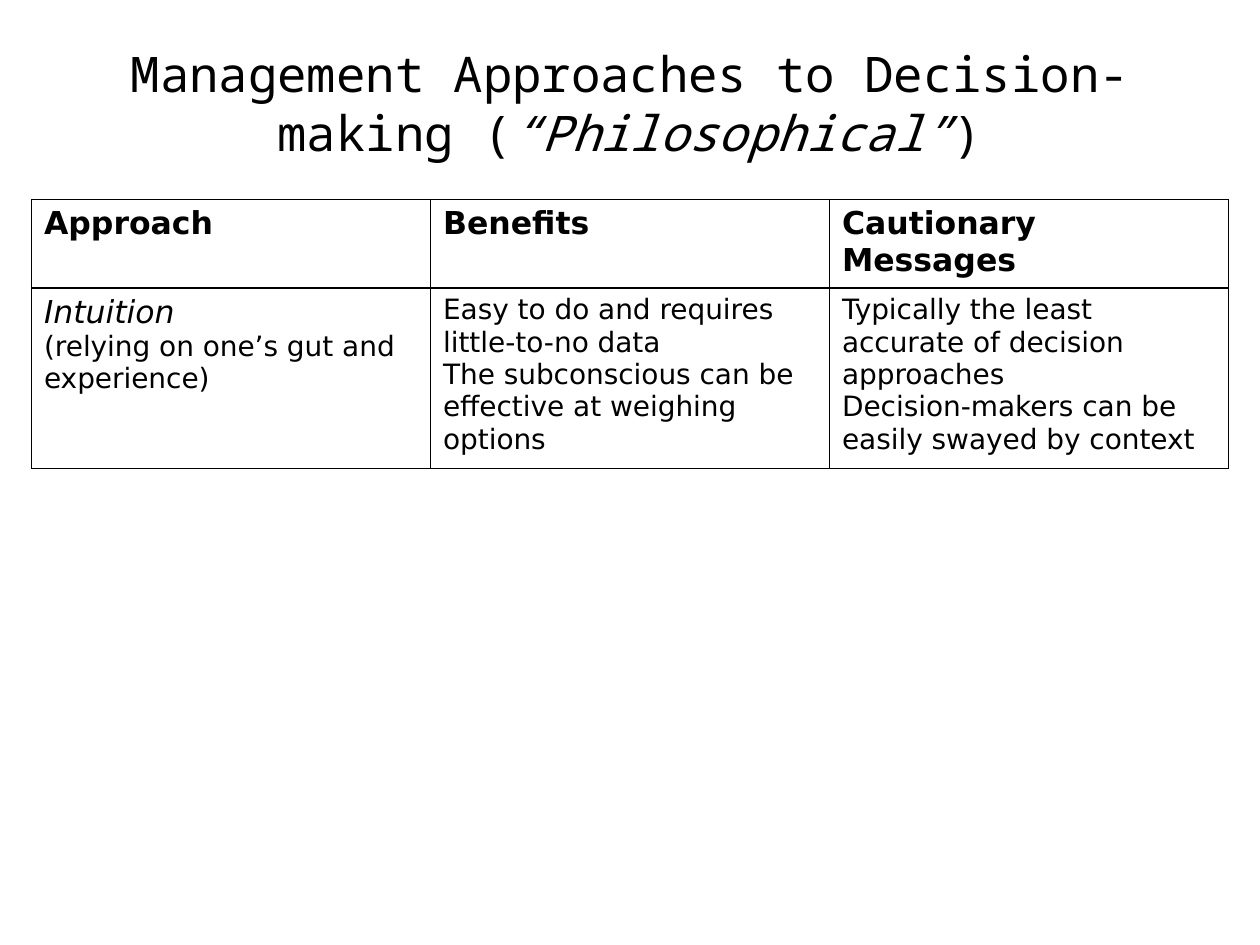
from lxml import etree
from pptx import Presentation
from pptx import util as u
from pptx.dml.color import RGBColor
from pptx.enum import text
from pptx.oxml.ns import qn

COLOURS = {"ink": "000000"}
TITLE = {"name": "Noto Sans Mono", "size": u.Pt(28)}
HEADING = {"name": "DejaVu Sans", "size": u.Pt(18), "bold": True}
TERM = {"name": "DejaVu Sans", "size": u.Pt(18), "italic": True}
BODY = {"name": "DejaVu Sans", "size": u.Pt(16)}


class Deck:
    """Holds the style and the current slide."""

    def __init__(self, width, height):
        self.file = Presentation()
        self.file.slide_width, self.file.slide_height = u.Pt(width), u.Pt(height)
        self.slide = self.file.slides.add_slide(self.file.slide_layouts[6])
        self.ink = COLOURS["ink"]

    def add_wording(self, paragraph, wording, style):
        run = paragraph.add_run()
        run.text = wording
        for key, value in style.items():
            setattr(run.font, key, value)
        run.font.color.rgb = RGBColor.from_string(self.ink)

    def title(self, box, runs):
        frame = self.slide.shapes.add_textbox(*map(u.Pt, box)).text_frame
        frame.word_wrap = True
        frame.vertical_anchor = text.MSO_ANCHOR.MIDDLE
        heading = frame.paragraphs[0]
        heading.alignment = text.PP_ALIGN.CENTER
        for wording, style in runs:
            self.add_wording(heading, wording, style)

    def border(self, cell, weight):
        properties = cell._tc.get_or_add_tcPr()
        for position, side in enumerate(("lnL", "lnR", "lnT", "lnB")):
            line = etree.Element(qn(f"a:{side}"), w=str(u.Pt(weight)))
            fill = etree.SubElement(line, qn("a:solidFill"))
            etree.SubElement(fill, qn("a:srgbClr"), val=self.ink)
            properties.insert(position, line)

    def table(self, box, row_heights, rows):
        grid = self.slide.shapes.add_table(
            len(rows), len(rows[0]), *map(u.Pt, box)).table
        grid.first_row = grid.horz_banding = False
        for row, height in zip(grid.rows, row_heights):
            row.height = u.Pt(height)
        for r, row in enumerate(rows):
            for c, lines in enumerate(row):
                cell = grid.cell(r, c)
                cell.fill.background()
                self.border(cell, 1)
                frame = cell.text_frame
                for i, (wording, style) in enumerate(lines):
                    paragraph = frame.add_paragraph() if i else frame.paragraphs[0]
                    self.add_wording(paragraph, wording, style)


def main():
    deck = Deck(720, 540)

    # Title
    deck.title((36, 21.6, 648, 74), [
        ("Management Approaches to Decision-making (", TITLE),
        ("“Philosophical”", {**TITLE, "italic": True}),
        (")", TITLE),
    ])

    # Approaches with their benefits and cautions
    headings = [[(name, HEADING)]
                for name in ("Approach", "Benefits", "Cautionary Messages")]
    intuition = [
        [("Intuition", TERM),
         ("(relying on one’s gut and experience)", BODY)],
        [("Easy to do and requires little-to-no data", BODY),
         ("The subconscious can be effective at weighing options", BODY)],
        [("Typically the least accurate of decision approaches", BODY),
         ("Decision-makers can be easily swayed by context", BODY)],
    ]
    deck.table((18, 114, 684, 133), (30, 103), [headings, intuition])

    deck.file.save("out.pptx")


if __name__ == "__main__":
    main()
